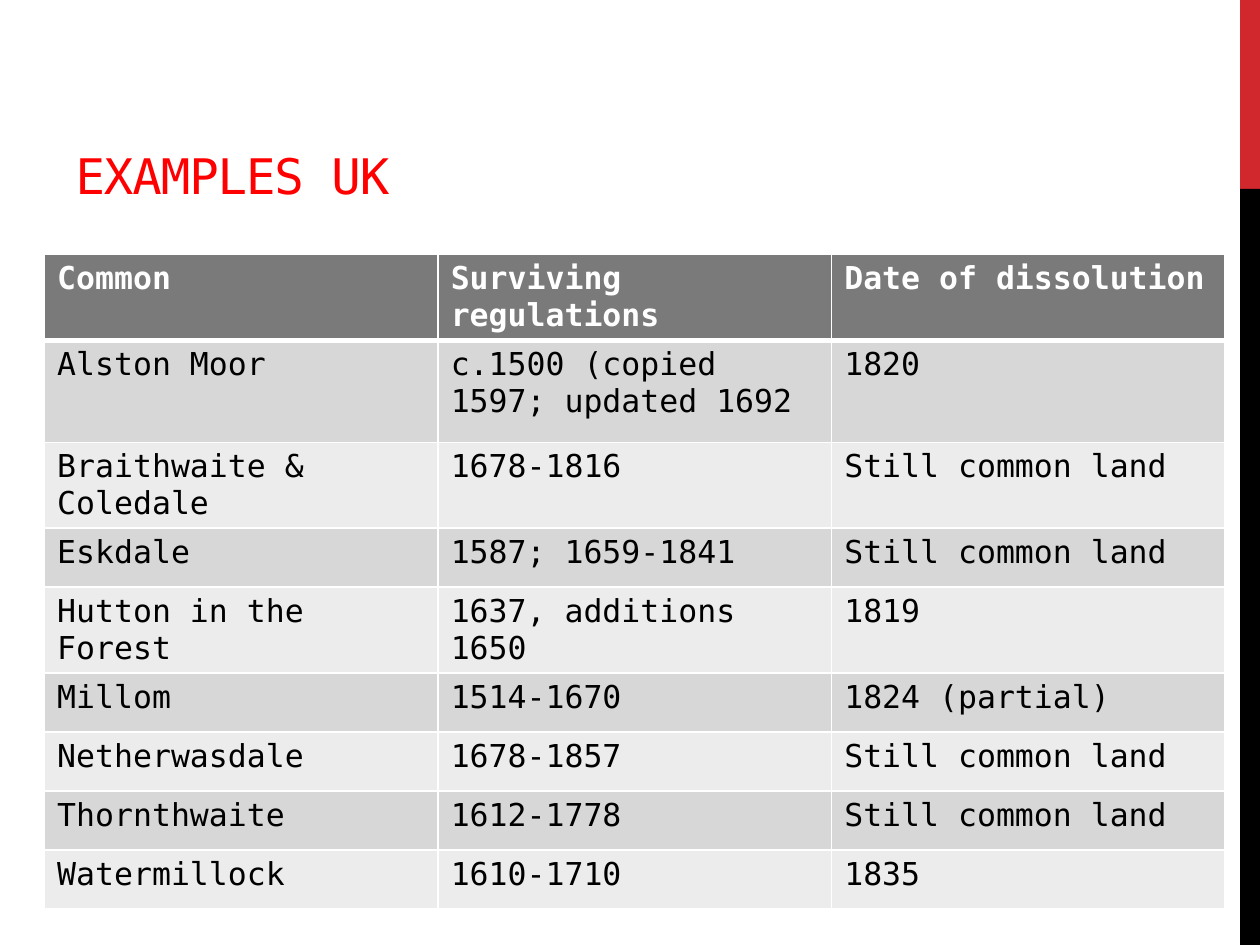
from lxml.etree import SubElement
from pptx import Presentation
from pptx.dml.color import RGBColor as RGB
from pptx.enum.shapes import MSO_SHAPE as SHAPE
from pptx.enum.text import MSO_ANCHOR as ANCHOR, PP_ALIGN as ALIGN
from pptx.oxml import parse_xml
from pptx.oxml.ns import nsdecls, qn
from pptx.util import Cm, Pt

COLORS = {
    "title": "FF0000", "accent": "D1282E", "black": "000000", "white": "FFFFFF",
    "header": "7A7A7A", "odd": "D7D7D7", "even": "ECECEC",
}
FONT = "DejaVu Sans Mono"
ROWS = [
    ("Common", "Surviving regulations", "Date of dissolution"),
    ("Alston Moor", "c.1500 (copied 1597; updated 1692", "1820"),
    ("Braithwaite & Coledale", "1678-1816", "Still common land"),
    ("Eskdale", "1587; 1659-1841", "Still common land"),
    ("Hutton in the Forest", "1637, additions 1650", "1819"),
    ("Millom", "1514-1670", "1824 (partial)"),
    ("Netherwasdale", "1678-1857", "Still common land"),
    ("Thornthwaite", "1612-1778", "Still common land"),
    ("Watermillock", "1610-1710", "1835"),
]


def rgb(name):
    """Return the named colour."""
    return RGB.from_string(COLORS[name])


def style(p, size, color, bold=False):
    """Set the font of a whole paragraph."""
    f = p.font
    f.name, f.size, f.bold = FONT, Pt(size), bold
    f.color.rgb = rgb(color)


def add_side_bar(slide, x, y, w, h):
    """Draw the two-colour bar, its top fifth in the accent colour."""
    top = int(h / 5)
    for color, dy, height in (("accent", 0, top), ("black", top, h - top)):
        s = slide.shapes.add_shape(SHAPE.RECTANGLE, x, y + dy, w, height)
        s.shadow.inherit = False
        s.fill.solid()
        s.fill.fore_color.rgb = rgb(color)
        s.line.fill.background()


def add_title(slide, x, y, w, h, text):
    """Place and format the title placeholder."""
    s = slide.shapes.title
    s.left, s.top, s.width, s.height = x, y, w, h
    tf = s.text_frame
    tf.text = text
    tf.word_wrap = True
    tf.vertical_anchor = ANCHOR.BOTTOM
    p = tf.paragraphs[0]
    p.alignment = ALIGN.LEFT
    style(p, 28, "title")
    p.runs[0].font._element.set("spc", "-60")


def set_borders(cell, bottom):
    """Give a cell white borders, the lower one of the given width."""
    tc_pr = cell._tc.get_or_add_tcPr()
    for i, side in enumerate("LRTB"):
        width = Pt(bottom if side == "B" else 1)
        ln = parse_xml(f'<a:ln{side} {nsdecls("a")} w="{width}"/>')
        fill = SubElement(ln, qn("a:solidFill"))
        SubElement(fill, qn("a:srgbClr"), val=COLORS["white"])
        tc_pr.insert(i, ln)


def add_commons_table(slide, x, y, w, row_h, first_h):
    """Add the table of commons with a header and banded rows."""
    n_rows, n_cols = len(ROWS), len(ROWS[0])
    height = row_h * (n_rows - 1) + first_h
    table = slide.shapes.add_table(n_rows, n_cols, x, y, w, height).table
    for i, row in enumerate(ROWS):
        table.rows[i].height = first_h if i == 1 else row_h
        fill = "header" if i == 0 else "odd" if i % 2 else "even"
        for j, text in enumerate(row):
            cell = table.cell(i, j)
            cell.text = text
            cell.fill.solid()
            cell.fill.fore_color.rgb = rgb(fill)
            set_borders(cell, 1 if i else 3)
            style(cell.text_frame.paragraphs[0], 18,
                  "black" if i else "white", bold=i == 0)


def main():
    """Build the slide and save it."""
    prs = Presentation()
    prs.slide_width, prs.slide_height = Cm(25.4), Cm(19.05)
    slide = prs.slides.add_slide(prs.slide_layouts[5])
    add_side_bar(slide, Cm(25), 0, Cm(0.4), prs.slide_height)
    add_title(slide, Cm(1.27), Cm(0.43), Cm(16.08), Cm(3.81), "EXAMPLES UK")
    add_commons_table(slide, Cm(0.9), Cm(5.13), Cm(23.8), Cm(1.19), Cm(2.06))
    prs.save("out.pptx")


if __name__ == "__main__":
    main()
